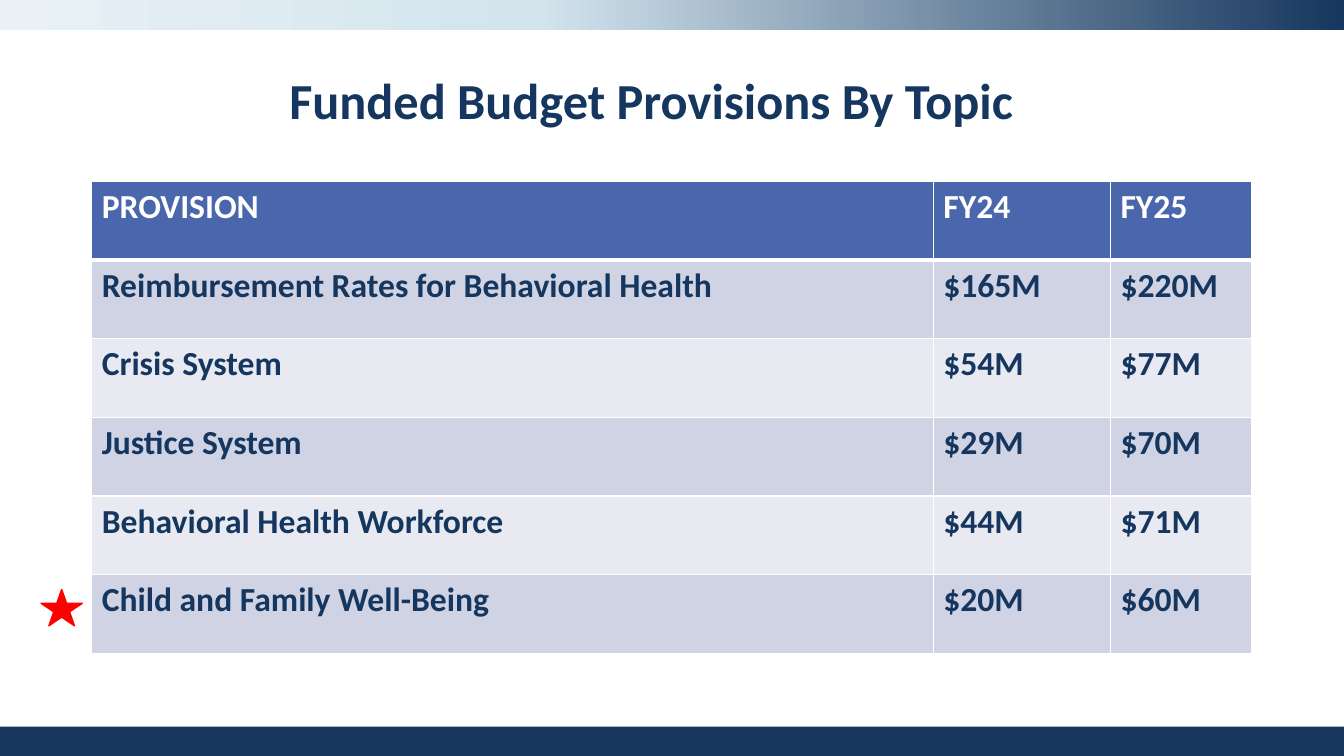
from lxml import etree
from pptx import Presentation
from pptx.dml.color import RGBColor
from pptx.enum.shapes import MSO_SHAPE
from pptx.enum.text import MSO_ANCHOR, PP_ALIGN
from pptx.oxml import parse_xml
from pptx.oxml.ns import nsdecls, qn
from pptx.util import Pt

RECTANGLE = MSO_SHAPE.RECTANGLE
STAR = MSO_SHAPE.STAR_5_POINT
CENTER = PP_ALIGN.CENTER
MIDDLE = MSO_ANCHOR.MIDDLE

SLIDE_W, SLIDE_H = 960, 540
BAND_H = 21.6
COLORS = {
    "navy": "17375E",
    "sky": "D3E4ED",
    "mist": "E9F1F6",
    "text": "15365E",
    "white": "FFFFFF",
    "header": "4A66AC",
    "odd_row": "D0D3E3",
    "even_row": "E9EAF1",
    "star": "FF0000",
}
BAND_STOPS = [(0, "navy"), (60, "sky"), (100, "mist")]

PROVISIONS = [
    ("PROVISION", "FY24", "FY25"),
    ("Reimbursement Rates for Behavioral Health", "$165M", "$220M"),
    ("Crisis System", "$54M", "$77M"),
    ("Justice System", "$29M", "$70M"),
    ("Behavioral Health Workforce", "$44M", "$71M"),
    ("Child and Family Well-Being", "$20M", "$60M"),
]
COLUMN_WIDTHS = [601.2, 126.5, 101]
ROW_H = 56.2


def rgb(name):
    return RGBColor.from_string(COLORS[name])


def style_run(run, color, size):
    font_values = {"name": "Calibri", "size": Pt(size), "bold": True}
    for attribute, value in font_values.items():
        setattr(run.font, attribute, value)
    run.font.color.rgb = rgb(color)


def add_filled_shape(slide, kind, box, color, outlined=False):
    shape = slide.shapes.add_shape(kind, *map(Pt, box))
    shape.shadow.inherit = False
    shape.fill.solid()
    shape.fill.fore_color.rgb = rgb(color)
    if outlined:
        shape.line.color.rgb = rgb(color)
        shape.line.width = Pt(1)
    else:
        shape.line.fill.background()
    return shape


def apply_gradient(shape, stops):
    """Replace the plain fill by a gradient running from right to left."""
    stop_xml = "".join(
        f'<a:gs pos="{percent * 1000}"><a:srgbClr val="{COLORS[name]}"/></a:gs>'
        for percent, name in stops
    )
    gradient = parse_xml(
        f'<a:gradFill {nsdecls("a")} rotWithShape="1"><a:gsLst>{stop_xml}</a:gsLst>'
        '<a:lin ang="10800000" scaled="0"/></a:gradFill>'
    )
    properties = shape.fill._xPr
    properties.replace(properties.find(qn("a:solidFill")), gradient)


def add_title(slide, text, box):
    title = slide.shapes.add_textbox(*map(Pt, box))
    frame = title.text_frame
    frame.word_wrap = True
    frame.vertical_anchor = MIDDLE
    heading = frame.paragraphs[0]
    heading.alignment = CENTER
    heading.line_spacing = 0.9
    run = heading.add_run()
    run.text = text
    style_run(run, "text", 36)


def set_borders(cell, widths):
    properties = cell._tc.get_or_add_tcPr()
    for side, width in widths.items():
        line = etree.SubElement(properties, qn(f"a:ln{side}"), w=str(Pt(width)))
        fill = etree.SubElement(line, qn("a:solidFill"))
        etree.SubElement(fill, qn("a:srgbClr"), val=COLORS["white"])


def row_fill(row):
    if row == 0:
        return "header"
    return "odd_row" if row % 2 else "even_row"


def add_provision_table(slide, left, top):
    size = (sum(COLUMN_WIDTHS), ROW_H * len(PROVISIONS))
    frame = slide.shapes.add_table(
        len(PROVISIONS), len(COLUMN_WIDTHS), Pt(left), Pt(top), *map(Pt, size)
    )
    table = frame.table
    for column, width in zip(table.columns, COLUMN_WIDTHS):
        column.width = Pt(width)
    for r, provision in enumerate(PROVISIONS):
        table.rows[r].height = Pt(ROW_H)
        # The rule under the header is thicker than the rest
        borders = {"L": 1, "R": 1, "T": 3 if r == 1 else 1, "B": 3 if r == 0 else 1}
        for c, text in enumerate(provision):
            cell = table.cell(r, c)
            set_borders(cell, borders)
            cell.fill.solid()
            cell.fill.fore_color.rgb = rgb(row_fill(r))
            run = cell.text_frame.paragraphs[0].add_run()
            run.text = text
            style_run(run, "text" if r else "white", 24)


def main():
    deck = Presentation()
    deck.slide_width, deck.slide_height = Pt(SLIDE_W), Pt(SLIDE_H)
    slide = deck.slides.add_slide(deck.slide_layouts[6])

    # Bands along the bottom and top edges
    add_filled_shape(slide, RECTANGLE, (0, 519, SLIDE_W, SLIDE_H - 519), "navy")
    top_band = add_filled_shape(slide, RECTANGLE, (0, 0, SLIDE_W, BAND_H), "navy")
    apply_gradient(top_band, BAND_STOPS)

    # Title and budget table
    add_title(slide, "Funded Budget Provisions By Topic ", (51.1, 51.8, 836.6, 43.2))
    add_provision_table(slide, 65.5, 129.6)

    # Star beside the highlighted provision
    add_filled_shape(slide, STAR, (29.3, 421, 29.5, 26), "star", outlined=True)

    deck.save("out.pptx")


if __name__ == "__main__":
    main()
